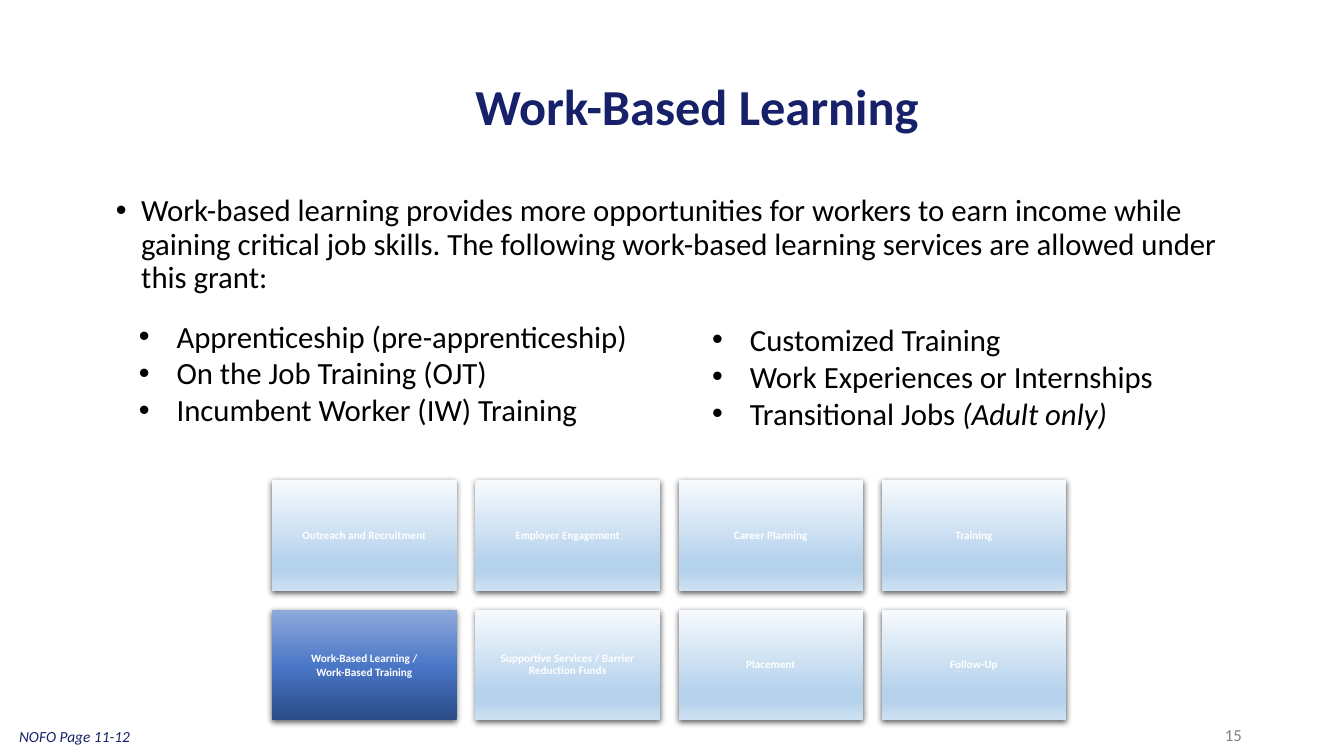
from lxml import etree
from pptx import Presentation
from pptx.dml.color import RGBColor
from pptx.enum.shapes import MSO_SHAPE
from pptx.enum.text import MSO_ANCHOR as ANCHOR, PP_ALIGN as ALIGN
from pptx.oxml import parse_xml
from pptx.oxml.ns import nsdecls, qn
from pptx.util import Cm, Pt

NAVY = RGBColor(0x17, 0x21, 0x69)
BLACK = RGBColor(0, 0, 0)
GRAY = RGBColor(0x80, 0x80, 0x80)
WHITE = RGBColor(0xFF, 0xFF, 0xFF)
PALE = RGBColor(0xF7, 0xFA, 0xFD)
SKY = RGBColor(0xB5, 0xD2, 0xEC)
MIST = RGBColor(0xCE, 0xE1, 0xF2)
DEEP = RGBColor(0x2A, 0x4B, 0x86)
BLUE = RGBColor(0x4A, 0x76, 0xC6)
SOFT = RGBColor(0x8F, 0xAA, 0xDC)

FADED = [(0, PALE), (74, SKY), (83, SKY), (100, MIST)], 90
CURRENT = [(0, DEEP), (48, BLUE), (100, SOFT)], 270

STEPS = [
    ["Outreach and Recruitment"],
    ["Employer Engagement"],
    ["Career Planning"],
    ["Training"],
    ["Work-Based Learning /", "Work-Based Training"],
    ["Supportive Services / Barrier Reduction Funds"],
    ["Placement"],
    ["Follow-Up"],
]
CURRENT_STEP = 4
COLUMNS = 4


def add_run(p, text, size, color, bold=False, italic=False):
    r = p.add_run()
    r.text = text
    f = r.font
    f.name, f.size, f.bold, f.italic = "Calibri", Pt(size), bold, italic
    f.color.rgb = color


def add_bullet(p, margin, hanging):
    pPr = p._p.get_or_add_pPr()
    pPr.set("marL", str(Cm(margin)))
    pPr.set("indent", str(-Cm(hanging)))
    etree.SubElement(pPr, qn("a:buFont")).set("typeface", "Arial")
    etree.SubElement(pPr, qn("a:buChar")).set("char", "•")


def add_box(slide, left, top, width, height, anchor=ANCHOR.TOP):
    s = slide.shapes.add_textbox(Cm(left), Cm(top), Cm(width), Cm(height))
    tf = s.text_frame
    tf.word_wrap = True
    tf.vertical_anchor = anchor
    return tf


def add_line(slide, box, text, size, color, align=ALIGN.LEFT,
             anchor=ANCHOR.TOP, **style):
    p = add_box(slide, *box, anchor).paragraphs[0]
    p.alignment = align
    add_run(p, text, size, color, **style)
    return p


def add_intro(slide, box, text):
    p = add_box(slide, *box).paragraphs[0]
    p.line_spacing = 0.9
    add_bullet(p, 0.64, 0.64)
    add_run(p, text, 22, BLACK)


def add_services(slide, box, services):
    tf = add_box(slide, *box)
    for i, (name, note) in enumerate(services):
        p = tf.add_paragraph() if i else tf.paragraphs[0]
        add_bullet(p, 2.22, 0.95)
        add_run(p, name, 22, BLACK)
        if note:
            add_run(p, note, 22, BLACK, italic=True)


def add_step(slide, left, top, width, height, lines, gradient):
    s = slide.shapes.add_shape(MSO_SHAPE.RECTANGLE, Cm(left), Cm(top),
                               Cm(width), Cm(height))
    stops, angle = gradient
    gs = "".join(f'<a:gs pos="{pos * 1000}"><a:srgbClr val="{color}"/></a:gs>'
                 for pos, color in stops)
    spPr = s._element.spPr
    spPr.append(parse_xml(
        f'<a:gradFill {nsdecls("a")} rotWithShape="1"><a:gsLst>{gs}</a:gsLst>'
        f'<a:lin ang="{angle * 60000}" scaled="0"/></a:gradFill>'))
    s.line.fill.background()
    s.shadow.inherit = False
    spPr.find(qn("a:effectLst")).append(parse_xml(
        f'<a:outerShdw {nsdecls("a")} blurRad="{Pt(4.5)}" dist="{Pt(1.5)}" '
        'dir="5400000" algn="ctr" rotWithShape="0"><a:srgbClr val="000000">'
        '<a:alpha val="63000"/></a:srgbClr></a:outerShdw>'))
    tf = s.text_frame
    tf.word_wrap = True
    tf.vertical_anchor = ANCHOR.MIDDLE
    tf.margin_left = tf.margin_right = Cm(0.08)
    tf.margin_top = tf.margin_bottom = Cm(0.08)
    for i, line in enumerate(lines):
        p = tf.add_paragraph() if i else tf.paragraphs[0]
        p.alignment = ALIGN.CENTER
        if len(lines) == 1:
            p.line_spacing = 0.9
        add_run(p, line, 8, WHITE, bold=True)


def add_step_grid(slide, left, top, width, height):
    gap = 0.47
    rows = len(STEPS) // COLUMNS
    w = (width - gap * (COLUMNS - 1)) / COLUMNS
    h = (height - gap * (rows - 1)) / rows
    for i, lines in enumerate(STEPS):
        row, col = divmod(i, COLUMNS)
        add_step(slide, left + col * (w + gap), top + row * (h + gap), w, h,
                 lines, CURRENT if i == CURRENT_STEP else FADED)


def main():
    prs = Presentation()
    prs.slide_width, prs.slide_height = Cm(33.87), Cm(19.05)
    s = prs.slides.add_slide(prs.slide_layouts[6])
    title = add_line(s, (4.22, 1.98, 26.7, 1.55), "Work-Based Learning", 36,
                     NAVY, ALIGN.CENTER, ANCHOR.MIDDLE, bold=True)
    title.line_spacing = 0.9
    add_intro(s, (2.67, 4.8, 29.21, 3.15),
              "Work-based learning provides more opportunities for workers to "
              "earn income while gaining critical job skills. The following "
              "work-based learning services are allowed under this grant:")
    add_line(s, (23.93, 18.01, 7.62, 1.02), "15", 12, GRAY, ALIGN.RIGHT,
             ANCHOR.MIDDLE)
    add_step_grid(s, 6.86, 12.1, 20.01, 6.05)
    add_line(s, (0.23, 18.19, 5.92, 0.74), "NOFO Page 11-12", 11, NAVY,
             italic=True)
    add_services(s, (1.98, 7.87, 16.94, 3.07), [
        ("Apprenticeship (pre-apprenticeship)", ""),
        ("On the Job Training (OJT)", ""),
        ("Incumbent Worker (IW) Training", "")])
    add_services(s, (16.43, 7.95, 16.94, 3.07), [
        ("Customized Training", ""),
        ("Work Experiences or Internships", ""),
        ("Transitional Jobs ", "(Adult only)")])
    prs.save("out.pptx")


if __name__ == "__main__":
    main()
